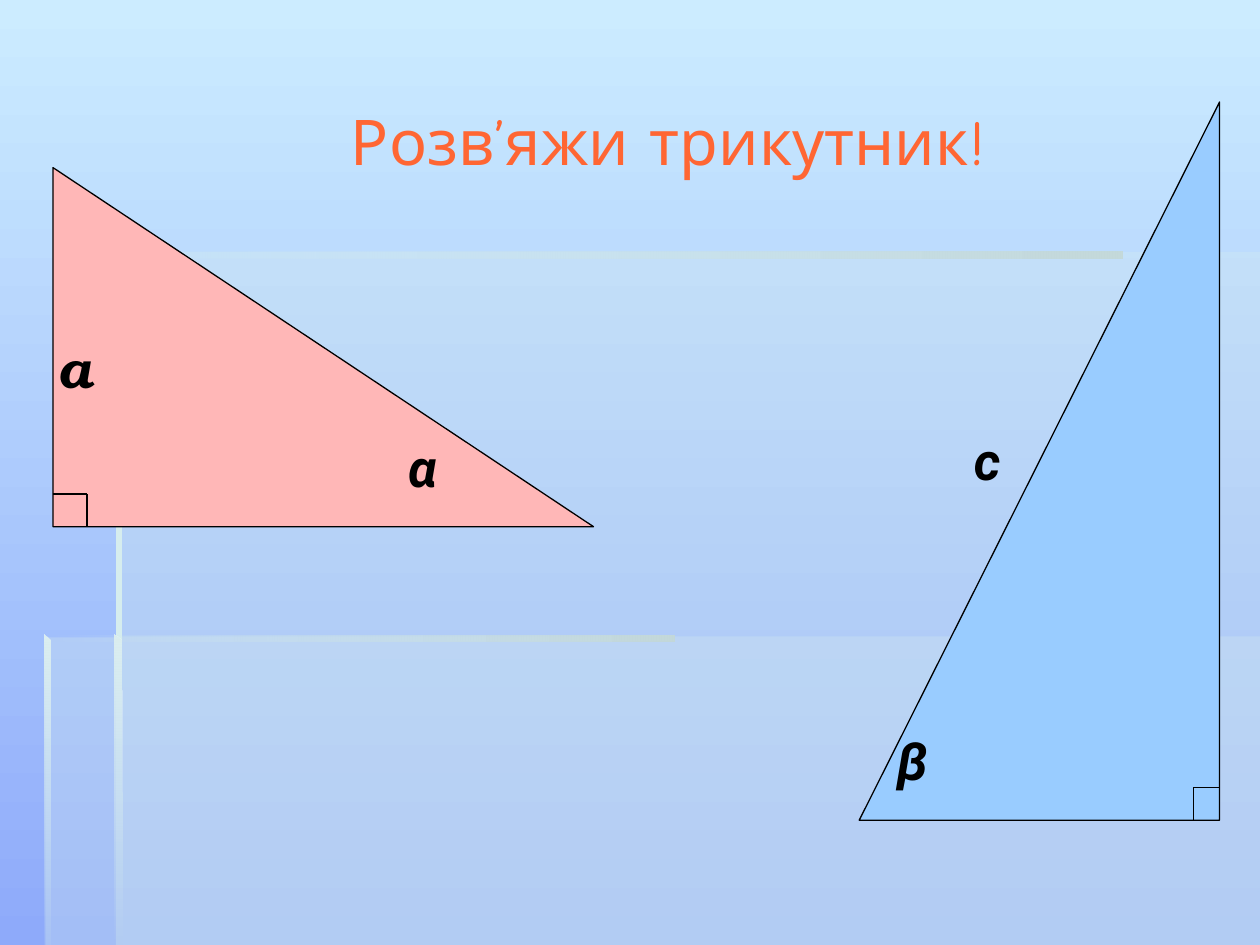
from lxml import etree
from pptx import Presentation
from pptx import util as u
from pptx.dml.color import RGBColor
from pptx.enum import shapes, text
from pptx.oxml.ns import qn

COLORS = {
    "sky": "CCECFF", "deep": "8EAAFA", "mist": "D6EDEE", "pale": "DCEFF0",
    "bar": "C4D9DA", "pink": "FFB7B7", "blue": "99CCFF", "ink": "000000",
    "title": "FF6633",
}
RIGHTWARD, DOWNWARD = 0, 270


def color(name):
    return RGBColor.from_string(COLORS[name])


def set_gradient(fill, names, angle):
    fill.gradient()
    fill.gradient_angle = angle
    for stop, name in zip(fill.gradient_stops, names):
        stop.color.rgb = color(name)


def set_opacity(shape, percents):
    """Give each fill colour of the shape its opacity, in order."""
    for node, percent in zip(shape.element.iter(qn("a:srgbClr")), percents):
        if percent < 100:
            etree.SubElement(node, qn("a:alpha")).set("val", str(percent * 1000))


def add_outline(slide, points):
    corners = [(u.Inches(x), u.Inches(y)) for x, y in points]
    builder = slide.shapes.build_freeform(*corners[0])
    builder.add_line_segments(corners[1:], close=True)
    shape = builder.convert_to_shape()
    shape.shadow.inherit = False
    shape.line.fill.background()
    return shape


def add_panel(slide, points):
    panel = add_outline(slide, points)
    panel.fill.solid()
    panel.fill.fore_color.rgb = color("mist")
    set_opacity(panel, [30])


def add_bar(slide, points, names, angle, opacity):
    bar = add_outline(slide, points)
    set_gradient(bar.fill, names, angle)
    set_opacity(bar, opacity)


def add_backdrop(slide):
    set_gradient(slide.background.fill, ("sky", "deep"), DOWNWARD)
    add_panel(slide, [(0.92, 5.05), (0.92, 7.5), (10, 7.5), (10, 5.05)])
    add_panel(slide, [(0.94, 5.06), (0.36, 5.06), (0.36, 7.5),
                      (10, 7.5), (10, 2), (0.94, 2)])
    upright, level = ("pale", "mist"), ("mist", "bar")
    add_bar(slide, [(0.92, 2), (0.92, 2.05), (8.91, 2.05), (8.91, 2)],
            level, RIGHTWARD, (0, 100))
    add_bar(slide, [(0.92, 2), (0.92, 5.1), (0.97, 5.1), (0.96, 2.04)],
            upright, DOWNWARD, (100, 100))
    add_bar(slide, [(0.91, 7.5), (0.97, 7.5), (0.96, 5.08), (0.91, 5.04)],
            upright, DOWNWARD, (100, 0))
    add_bar(slide, [(0.35, 5.04), (0.35, 5.09), (5.35, 5.09), (5.35, 5.04)],
            level, RIGHTWARD, (0, 100))
    add_bar(slide, [(0.35, 5.04), (0.35, 7.5), (0.4, 7.5), (0.4, 5.09)],
            upright, DOWNWARD, (100, 10))


def set_line(shape):
    shape.line.color.rgb = color("ink")
    shape.line.width = u.Pt(0.75)


def add_triangle(slide, left, top, width, height, fill, flipped=False):
    triangle = slide.shapes.add_shape(
        shapes.MSO_SHAPE.RIGHT_TRIANGLE, u.Inches(left), u.Inches(top),
        u.Inches(width), u.Inches(height))
    triangle.shadow.inherit = False
    triangle.fill.solid()
    triangle.fill.fore_color.rgb = color(fill)
    set_line(triangle)
    if flipped:
        triangle.element.spPr.find(qn("a:xfrm")).set("flipH", "1")


def add_right_angle(slide, side_x, inner_x, top, base):
    """Mark the right angle between the side at side_x and the base."""
    for start, end in (((side_x, top), (inner_x, top)),
                       ((inner_x, top), (inner_x, base))):
        line = slide.shapes.add_connector(
            shapes.MSO_CONNECTOR.STRAIGHT, *map(u.Inches, start + end))
        set_line(line)
        etree.SubElement(line.element.spPr, qn("a:effectLst"))


def add_label(slide, letter, left, top, width=0.48, height=0.78, font="Roboto"):
    box = slide.shapes.add_textbox(*map(u.Inches, (left, top, width, height)))
    box.text_frame.word_wrap = True
    span = box.text_frame.paragraphs[0].add_run()
    span.text = letter
    span.font.name = font
    span.font.size = u.Pt(30)
    span.font.bold = span.font.italic = True
    span.font.color.rgb = color("ink")


def fill_title(slide, words):
    title = slide.shapes.title
    title.left, title.top = u.Inches(1.44), u.Inches(0.76)
    title.width, title.height = u.Inches(7.72), u.Inches(1.04)
    frame = title.text_frame
    frame.word_wrap = False
    frame.auto_size = text.MSO_AUTO_SIZE.NONE
    frame.vertical_anchor = text.MSO_ANCHOR.TOP
    para = frame.paragraphs[0]
    para.alignment = text.PP_ALIGN.CENTER
    span = para.add_run()
    span.text = words
    span.font.name = "Comic Neue"
    span.font.size = u.Pt(36)
    span.font.color.rgb = color("title")


def main():
    deck = Presentation()
    deck.slide_width, deck.slide_height = u.Inches(10), u.Inches(7.5)
    slide = deck.slides.add_slide(deck.slide_layouts.get_by_name("Title Only"))
    add_backdrop(slide)
    fill_title(slide, "Розв’яжи трикутник!")

    add_triangle(slide, 0.42, 1.33, 4.29, 2.85, "pink")
    add_right_angle(slide, 0.42, 0.69, 3.92, 4.18)
    add_label(slide, "а", 0.35, 2.62, font="TeX Gyre Bonum")
    add_label(slide, "α", 3.14, 3.4)

    add_triangle(slide, 6.82, 0.81, 2.86, 5.7, "blue", flipped=True)
    add_right_angle(slide, 9.68, 9.47, 6.25, 6.51)
    add_label(slide, "с", 7.63, 3.35, 0.61, 0.83)
    add_label(slide, "β", 7.02, 5.73)
    deck.save("out.pptx")


if __name__ == "__main__":
    main()
